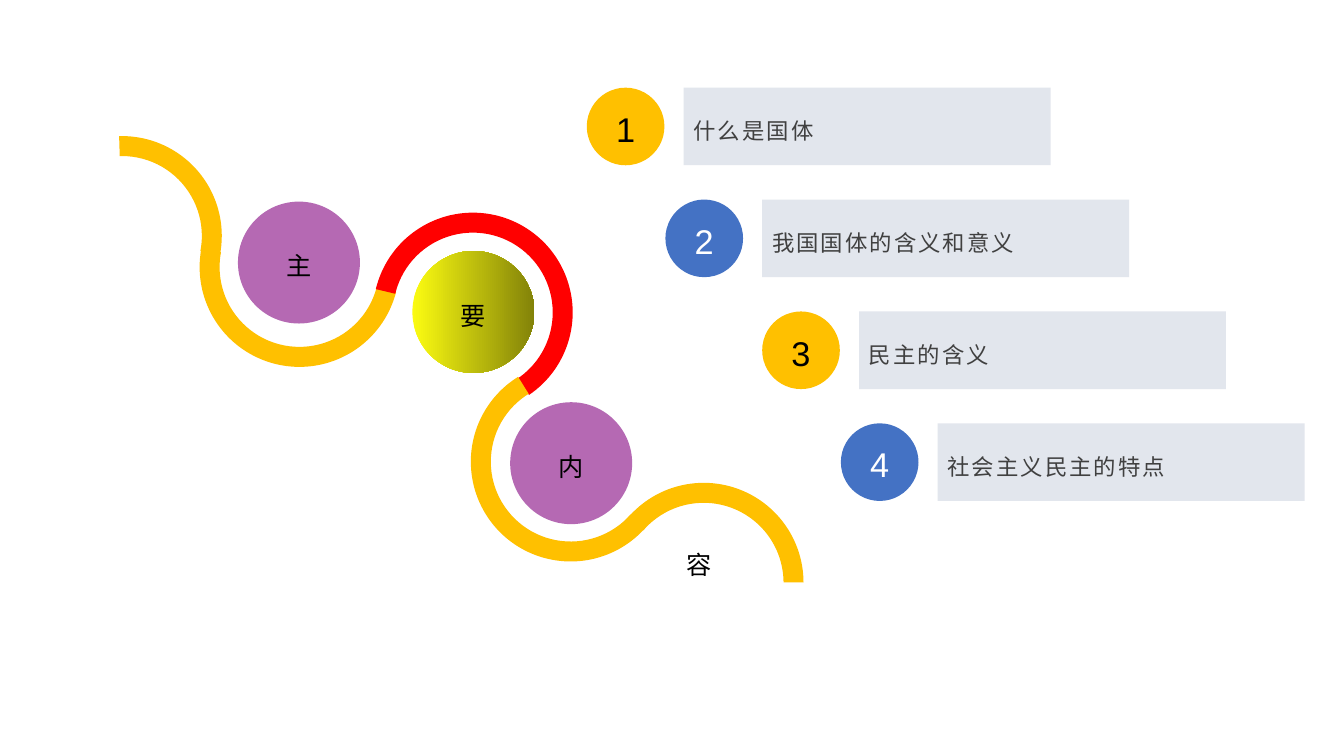
from dataclasses import dataclass
from lxml.etree import SubElement
from pptx import Presentation
from pptx.dml.color import RGBColor as RGB
from pptx.enum.shapes import MSO_SHAPE as Kind
from pptx.enum.text import MSO_ANCHOR as Anchor, PP_ALIGN as Align
from pptx.oxml.ns import qn
from pptx.util import Inches, Pt


@dataclass(frozen=True)
class Theme:
    gold: str = "FFC000"
    red: str = "FF0000"
    blue: str = "4472C4"
    plum: str = "B569B3"
    bar: str = "E2E6ED"
    lime: str = "FBFB11"
    olive: str = "838309"
    black: str = "000000"
    white: str = "FFFFFF"
    gray: str = "404040"
    latin: str = "Arial"
    asian: str = "Noto Sans CJK SC"
    head: float = 18
    body: float = 16
    digit: float = 24.5


class Deck:
    def __init__(self, theme):
        self.theme = theme
        self.show = Presentation()
        self.show.slide_width = Inches(13.33)
        self.show.slide_height = Inches(7.5)
        self.slide = self.show.slides.add_slide(self.show.slide_layouts[6])
        fill = self.slide.background.fill
        fill.solid()
        fill.fore_color.rgb = RGB.from_string(theme.white)

    def shape(self, kind, x, y, w, h, color):
        item = self.slide.shapes.add_shape(
            kind, Inches(x), Inches(y), Inches(w), Inches(h))
        item.shadow.inherit = False
        item.fill.solid()
        item.fill.fore_color.rgb = RGB.from_string(color)
        item.line.fill.background()
        return item

    def text(self, item, words, size, color, align=Align.CENTER,
             lead=1.0, space=0, latin=None):
        frame = item.text_frame
        frame.word_wrap = True
        frame.text = words
        para = frame.paragraphs[0]
        para.alignment = align
        para.line_spacing = lead
        font = para.runs[0].font
        font.size = Pt(size)
        font.name = latin or self.theme.latin
        font.color.rgb = RGB.from_string(color)
        props = para.runs[0]._r.get_or_add_rPr()
        SubElement(props, qn("a:ea")).set("typeface", self.theme.asian)
        if space:
            props.set("spc", str(int(space * 100)))

    def arc(self, x, y, start, end, thick, turn, flips, color):
        item = self.shape(Kind.BLOCK_ARC, x, y, 1.98, 1.98, color)
        for i, value in enumerate((start, end, thick)):
            item.adjustments[i] = value
        item.rotation = turn
        for axis in flips:
            item._element.spPr.xfrm.set("flip" + axis, "1")

    def disc(self, x, y, words, color, fade=None):
        item = self.shape(Kind.OVAL, x, y, 1.21, 1.21, color)
        if fade:
            item.fill.gradient()
            item.fill.gradient_angle = 0
            for stop, tone in zip(item.fill.gradient_stops, (color, fade)):
                stop.color.rgb = RGB.from_string(tone)
        item.text_frame.vertical_anchor = Anchor.MIDDLE
        self.text(item, words, self.theme.head, self.theme.black, lead=1.2)

    def entry(self, x, y, num, words, color, ink):
        style = self.theme
        bar = self.shape(Kind.RECTANGLE, x + 0.96, y, 3.64, 0.77, style.bar)
        bar.text_frame.vertical_anchor = Anchor.MIDDLE
        self.text(bar, words, style.body, style.gray, Align.LEFT, 1.3, 1.5)
        dot = self.shape(Kind.ROUNDED_RECTANGLE, x, y, 0.77, 0.77, color)
        dot.adjustments[0] = 0.5
        dot.text_frame.vertical_anchor = Anchor.MIDDLE
        self.text(dot, str(num), style.digit, ink, lead=1.1)

    def label(self, x, y, w, h, words):
        box = self.slide.shapes.add_textbox(
            Inches(x), Inches(y), Inches(w), Inches(h))
        self.text(box, words, self.theme.head, self.theme.black, Align.LEFT,
                  latin=self.theme.asian)


def main():
    look = Theme()
    deck = Deck(look)

    # Winding ribbon
    for arc in (
        (0.22, 1.35, 161.02, 6.56, 0.1, 0, "", look.gold),
        (1.98, 1.66, 116.62, 6.46, 0.1, 0, "HV", look.gold),
        (3.7, 2.11, 89.12, 6.46, 0.1, 45, "", look.red),
        (4.67, 3.59, 104.26, 6.46, 0.1, 52, "V", look.gold),
        (5.99, 4.79, 138.33, 5.7, 0.1, 50.4, "H", look.gold),
    ):
        deck.arc(*arc)

    # Title, one character per bend
    deck.disc(2.36, 2, "主", look.plum)
    deck.disc(4.09, 2.49, "要", look.lime, look.olive)
    deck.disc(5.06, 3.99, "内", look.plum)
    deck.label(6.71, 5.4, 1.04, 1.16, "容")

    # Numbered topics, stepping down to the right
    topics = ((5.82, "什么是国体"), (6.6, "我国国体的含义和意义"),
              (7.56, "民主的含义"), (8.34, "社会主义民主的特点"))
    tones = ((look.gold, look.black), (look.blue, look.white))
    for i, (x, words) in enumerate(topics):
        deck.entry(x, 0.87 + 1.11 * i, i + 1, words, *tones[i % 2])

    deck.show.save("out.pptx")


if __name__ == "__main__":
    main()
